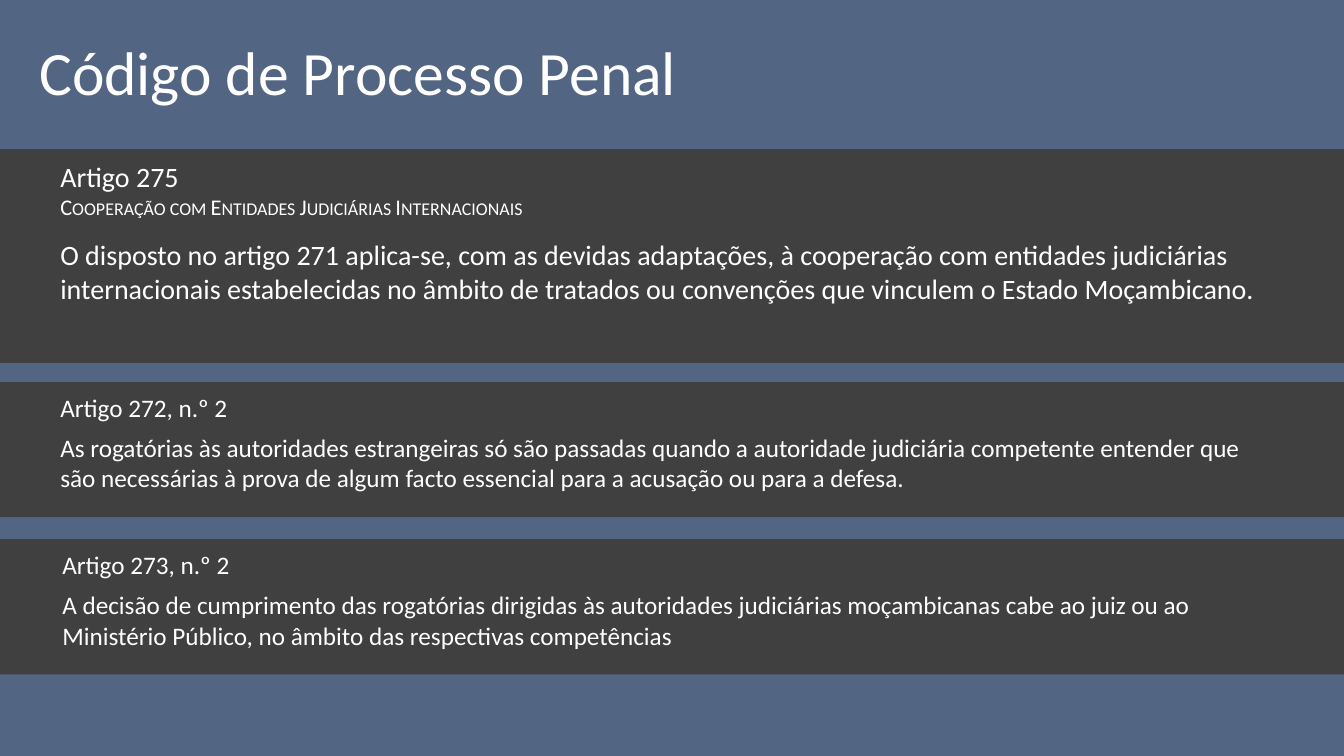
import pptx
import pptx.dml.color
import pptx.enum.shapes
import pptx.enum.text
import pptx.util

Inches = pptx.util.Inches
COLORS = {"background": "526582", "band": "404040", "text": "FFFFFF"}


class SlideBuilder:
    """Holds the style and the current slide."""

    def __init__(self, deck):
        self.font = "Calibri"
        self.page = deck.slides.add_slide(deck.slide_layouts[6])
        self.paint(self.page.background.fill, "background")

    def paint(self, fill, color):
        fill.solid()
        fill.fore_color.rgb = pptx.dml.color.RGBColor.from_string(COLORS[color])

    def band(self, shapes, left, top, width, height):
        band = shapes.add_shape(
            pptx.enum.shapes.MSO_SHAPE.RECTANGLE,
            Inches(left), Inches(top), Inches(width), Inches(height))
        band.shadow.inherit = False
        self.paint(band.fill, "band")
        band.line.fill.background()

    def text(self, shapes, left, top, width, height, lines):
        """Each line is (wording, size, small caps)."""
        box = shapes.add_textbox(
            Inches(left), Inches(top), Inches(width), Inches(height))
        frame = box.text_frame
        frame.word_wrap = True
        frame.auto_size = pptx.enum.text.MSO_AUTO_SIZE.SHAPE_TO_FIT_TEXT
        for index, (wording, size, small_caps) in enumerate(lines):
            para = frame.add_paragraph() if index else frame.paragraphs[0]
            span = para.add_run()
            span.text = wording
            span.font.name = self.font
            span.font.size = pptx.util.Pt(size)
            self.paint(span.font.fill, "text")
            if small_caps:
                span.font._element.set("cap", "small")

    def article(self, left, top, height, size, body_offset, body_height,
                heading, body, subtitle=None):
        """A dark band with a heading and the article's wording."""
        group = self.page.shapes.add_group_shape().shapes
        self.band(group, left, top, 13.94, height)
        text_left = left + 0.8
        self.text(group, text_left, top + body_offset, 12.3, body_height,
                  [(body, size, False)])
        lines = [(heading, size, False)]
        if subtitle:
            lines.append((subtitle, 16, True))
        self.text(group, text_left, top + 0.05, 12.3,
                  0.71 if subtitle else 0.4, lines)


def main():
    deck = pptx.Presentation()
    deck.slide_width, deck.slide_height = Inches(13.33), Inches(7.5)
    slide = SlideBuilder(deck)

    # Title
    slide.text(slide.page.shapes, 0.29, 0.29, 11.65, 0.84,
               [("Código de Processo Penal", 44, False)])

    # Main article
    slide.article(
        -0.3, 1.48, 2.12, 20, 0.83, 0.78, "Artigo 275",
        "O disposto no artigo 271 aplica-se, com as devidas adaptações, "
        "à cooperação com entidades judiciárias internacionais "
        "estabelecidas no âmbito de tratados ou convenções que vinculem "
        "o Estado Moçambicano.",
        "Cooperação com Entidades Judiciárias Internacionais")

    # Related articles
    related = [
        (-0.3, 3.79, "Artigo 272, n.º 2",
         "As rogatórias às autoridades estrangeiras só são passadas quando "
         "a autoridade judiciária competente entender que são necessárias "
         "à prova de algum facto essencial para a acusação ou para a defesa."),
        (-0.28, 5.35, "Artigo 273, n.º 2",
         "A decisão de cumprimento das rogatórias dirigidas às autoridades "
         "judiciárias moçambicanas cabe ao juiz ou ao Ministério Público, "
         "no âmbito das respectivas competências"),
    ]
    for left, top, heading, body in related:
        slide.article(left, top, 1.34, 18, 0.45, 0.71, heading, body)

    deck.save("out.pptx")


if __name__ == "__main__":
    main()
